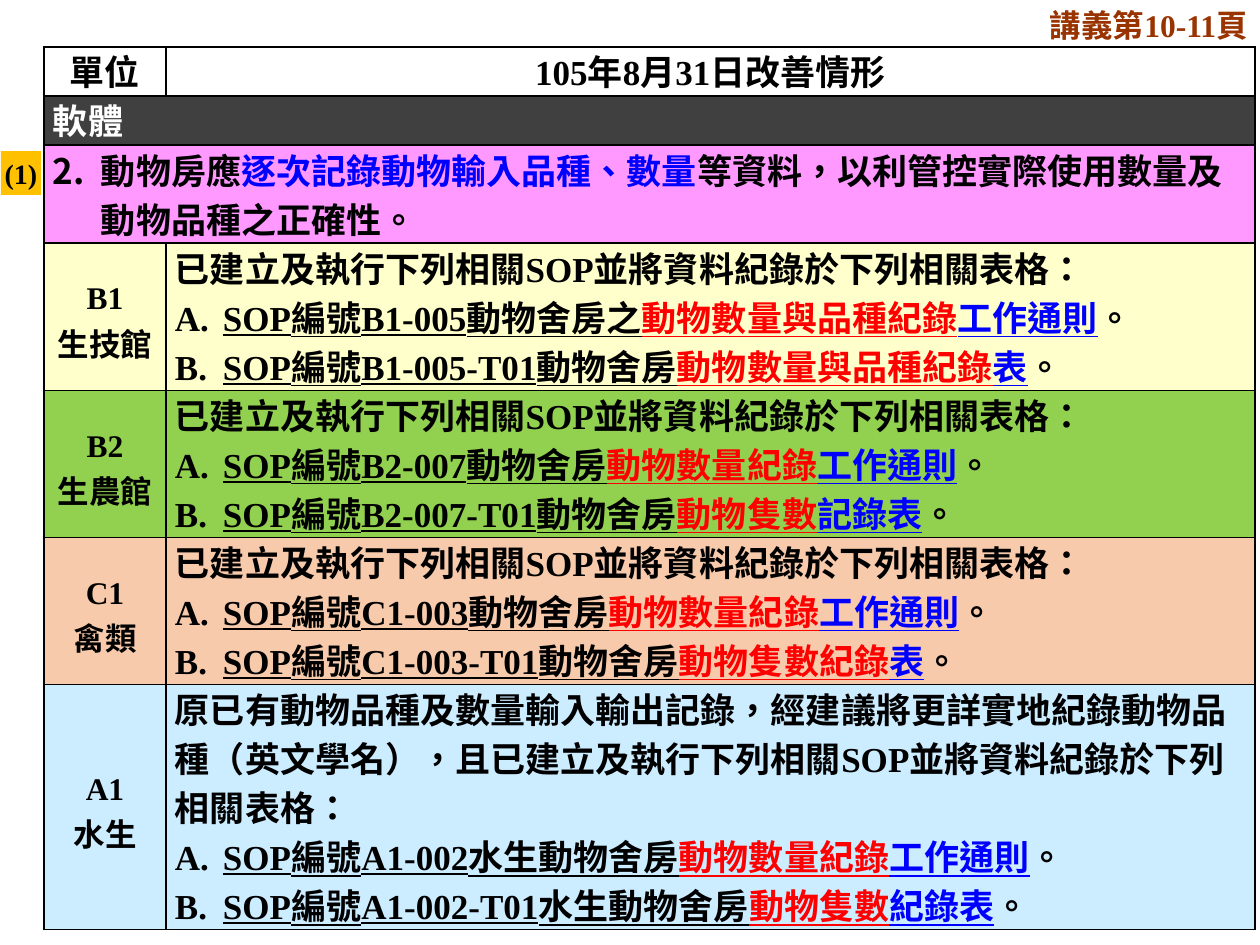
from dataclasses import dataclass

from lxml.etree import SubElement
from pptx import Presentation
from pptx.dml.color import RGBColor
from pptx.enum.lang import MSO_LANGUAGE_ID
from pptx.enum.shapes import MSO_SHAPE
from pptx.enum.text import MSO_ANCHOR, PP_ALIGN
from pptx.oxml.ns import qn
from pptx.util import Emu, Pt


@dataclass(frozen=True)
class Theme:
    font: str = "Times New Roman"
    black: str = "000000"
    white: str = "FFFFFF"
    red: str = "FF0000"
    blue: str = "0000FF"
    brown: str = "993300"
    charcoal: str = "404040"
    pink: str = "FF99FF"
    amber: str = "FFC000"
    body: int = 20
    label: int = 18
    marker: int = 16
    leading: int = 28


theme = Theme()
PX = 914400 / 126
LINE = 49  # one text line of 28 pt, in px
INDENT = 48


def write(frame, text, size=theme.body, color=theme.black, align=PP_ALIGN.LEFT,
          leading=theme.leading, numbering=None, start=1, underline=False):
    """Add a paragraph; text is a string or a list of (text, color) spans."""
    para = frame.paragraphs[0]
    if para.runs:
        para = frame.add_paragraph()
    para.alignment = align
    if leading:
        para.line_spacing = Pt(leading)
    if numbering:
        properties = para._p.get_or_add_pPr()
        properties.set("marL", str(round(INDENT * PX)))
        properties.set("indent", str(-round(INDENT * PX)))
        number = SubElement(properties, qn("a:buAutoNum"), type=numbering)
        if start > 1:
            number.set("startAt", str(start))
    for words, shade in [(text, color)] if isinstance(text, str) else text:
        span = para.add_run()
        span.text = words
        span.font.name = theme.font
        span.font.size = Pt(size)
        span.font.bold = True
        span.font.underline = True if underline and words != "。" else None
        span.font.language_id = MSO_LANGUAGE_ID.TRADITIONAL_CHINESE
        span.font.color.rgb = RGBColor.from_string(shade)


def format_cell(cell, fill=None, anchor=MSO_ANCHOR.TOP):
    """Set fill, margins, anchor and black borders; return the text frame."""
    cell.margin_left = cell.margin_right = Emu(round(9 * PX))
    cell.margin_top = cell.margin_bottom = 0
    cell.vertical_anchor = anchor
    properties = cell._tc.get_or_add_tcPr()
    for side in ("a:lnL", "a:lnR", "a:lnT", "a:lnB"):
        border = SubElement(properties, qn(side), w=str(Pt(1)))
        SubElement(SubElement(border, qn("a:solidFill")), qn("a:srgbClr"), val=theme.black)
    if fill:
        cell.fill.solid()
        cell.fill.fore_color.rgb = RGBColor.from_string(fill)
    else:
        cell.fill.background()
    return cell.text_frame


# Content: unit, place, fill, lines, introduction, then SOP entries (black, red, blue)
INTRO = "已建立及執行下列相關SOP並將資料紀錄於下列相關表格："
LONG_INTRO = "原已有動物品種及數量輸入輸出記錄，經建議將更詳實地紀錄動物品種（英文學名），且" + INTRO
units = [
    ("B1", "生技館", "FFFFCC", 3, INTRO,
     [("B1-005動物舍房之", "動物數量與品種紀錄", "工作通則"),
      ("B1-005-T01動物舍房", "動物數量與品種紀錄", "表")]),
    ("B2", "生農館", "92D050", 3, INTRO,
     [("B2-007動物舍房", "動物數量紀錄", "工作通則"),
      ("B2-007-T01動物舍房", "動物隻數", "記錄表")]),
    ("C1", "禽類", "F7CAAC", 3, INTRO,
     [("C1-003動物舍房", "動物數量紀錄", "工作通則"),
      ("C1-003-T01動物舍房", "動物隻數紀錄", "表")]),
    ("A1", "水生", "CCECFF", 5, LONG_INTRO,
     [("A1-002水生動物舍房", "動物數量紀錄", "工作通則"),
      ("A1-002-T01水生動物舍房", "動物隻數", "紀錄表")]),
]
row_lines = [1, 1, 2] + [unit[3] for unit in units]

deck = Presentation()
deck.slide_width, deck.slide_height = Emu(round(1260 * PX)), Emu(round(945 * PX))
page = deck.slides.add_slide(deck.slide_layouts[6])

# Table grid
column_widths = [122, 1089]
table = page.shapes.add_table(
    len(row_lines), 2,
    *(Emu(round(n * PX)) for n in (44, 47, sum(column_widths), sum(row_lines) * LINE))).table
table.first_row = table.horz_banding = False
for column, width in zip(table.columns, column_widths):
    column.width = Emu(round(width * PX))
for row, lines in zip(table.rows, row_lines):
    row.height = Emu(round(lines * LINE * PX))

# Header row
for column, heading in enumerate(["單位", "105年8月31日改善情形"]):
    frame = format_cell(table.cell(0, column), anchor=MSO_ANCHOR.MIDDLE)
    write(frame, heading, align=PP_ALIGN.CENTER)

# Section and requirement rows across both columns
for row, fill in ((1, theme.charcoal), (2, theme.pink)):
    table.cell(row, 0).merge(table.cell(row, 1))
    for column in (0, 1):
        format_cell(table.cell(row, column), fill)
write(table.cell(1, 0).text_frame, "軟體", color=theme.white)
write(table.cell(2, 0).text_frame,
      [("動物房應", theme.black), ("逐次記錄動物輸入品種、數量", theme.blue),
       ("等資料，以利管控實際使用數量及動物品種之正確性。", theme.black)],
      numbering="arabicPeriod", start=2)

# One row per unit
for row, (code, place, fill, _, intro, entries) in enumerate(units, start=3):
    frame = format_cell(table.cell(row, 0), fill, MSO_ANCHOR.MIDDLE)
    for label in (code, place):
        write(frame, label, size=theme.label, align=PP_ALIGN.CENTER)
    frame = format_cell(table.cell(row, 1), fill)
    write(frame, intro)
    for document, subject, kind in entries:
        write(frame,
              [("SOP編號" + document, theme.black), (subject, theme.red),
               (kind, theme.blue), ("。", theme.black)],
              numbering="alphaUcPeriod", underline=True)

# Handout page reference
box = page.shapes.add_textbox(*(Emu(round(n * PX)) for n in (966, 0, 294, 50)))
box.text_frame.word_wrap = True
box.text_frame.vertical_anchor = MSO_ANCHOR.MIDDLE
write(box.text_frame, "講義第10-11頁", size=theme.label, color=theme.brown,
      align=PP_ALIGN.RIGHT, leading=None)

# Marker beside the requirement, its label on one line
marker = page.shapes.add_shape(
    MSO_SHAPE.RECTANGLE, *(Emu(round(n * PX)) for n in (1, 151, 40, 44)))
marker.shadow.inherit = False
marker.fill.solid()
marker.fill.fore_color.rgb = RGBColor.from_string(theme.amber)
marker.line.fill.background()
frame = marker.text_frame
frame.word_wrap = False
frame.margin_left = frame.margin_right = frame.margin_top = frame.margin_bottom = 0
frame.vertical_anchor = MSO_ANCHOR.MIDDLE
write(frame, "(1)", size=theme.marker, align=PP_ALIGN.CENTER, leading=None)

deck.save("out.pptx")
